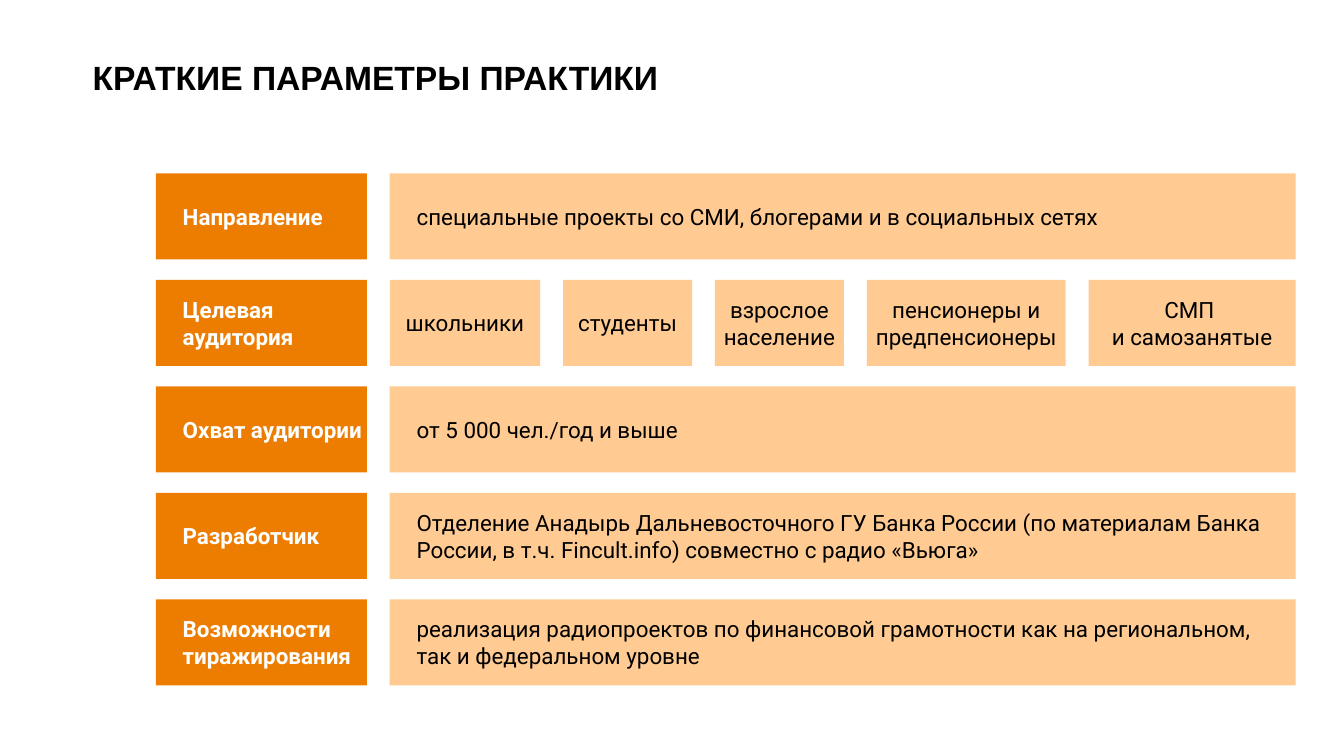
from pptx import Presentation
from pptx.dml.color import RGBColor
from pptx.enum.shapes import MSO_SHAPE
from pptx.enum.text import MSO_ANCHOR, PP_ALIGN
from pptx.util import Inches, Pt

RECTANGLE = MSO_SHAPE.RECTANGLE
TOP, MIDDLE = MSO_ANCHOR.TOP, MSO_ANCHOR.MIDDLE
LEFT, CENTER = PP_ALIGN.LEFT, PP_ALIGN.CENTER

ORANGE = RGBColor(0xED, 0x7D, 0x00)
PEACH = RGBColor(0xFF, 0xCB, 0x92)
WHITE = RGBColor(0xFF, 0xFF, 0xFF)
BLACK = RGBColor(0x00, 0x00, 0x00)

# Grid, in inches
SLIDE_WIDTH = 10
SLIDE_HEIGHT = SLIDE_WIDTH * 9 / 16
LABEL_LEFT, LABEL_WIDTH = 1.16, 1.57
GAP = 0.17
VALUE_LEFT = LABEL_LEFT + LABEL_WIDTH + GAP
VALUE_WIDTH = 6.74
FIRST_TOP, LAST_TOP = 1.29, 4.46
ROW_HEIGHT = 0.64
INDENT = 0.2

AUDIENCES = [
    ("школьники", 1.12),
    ("студенты", 0.96),
    ("взрослое население", 0.96),
    ("пенсионеры и предпенсионеры", 1.48),
    ("СМП \nи самозанятые", 1.54),
]
PARAMETERS = [
    ("Направление", "специальные проекты со СМИ, блогерами и в социальных сетях"),
    ("Целевая аудитория", AUDIENCES),
    ("Охват аудитории", "от 5 000 чел./год и выше"),
    ("Разработчик",
     "Отделение Анадырь Дальневосточного ГУ Банка России (по материалам Банка "
     "России, в т.ч. Fincult.info) совместно с радио «Вьюга»"),
    ("Возможности тиражирования",
     "реализация радиопроектов по финансовой грамотности как на региональном,\n"
     "так и федеральном уровне"),
]


def write(shape, text, color, size=12, font="Roboto", bold=False,
          align=LEFT, anchor=MIDDLE, indent=0):
    frame = shape.text_frame
    frame.word_wrap = True
    frame.vertical_anchor = anchor
    frame.margin_left = Inches(indent)
    frame.margin_top = frame.margin_right = frame.margin_bottom = 0
    frame.text = text
    for paragraph in frame.paragraphs:
        paragraph.alignment = align
        for run in paragraph.runs:
            run.font.name = font
            run.font.size = Pt(size)
            run.font.bold = bold
            run.font.color.rgb = color


def add_title(slide, text):
    title = slide.shapes.add_textbox(
        Inches(0.69), Inches(0.42), Inches(7.53), Inches(0.75))
    write(title, text, BLACK, size=18, font="Arial", bold=True, anchor=TOP)


def add_cell(slide, left, top, width, text, fill, color, **style):
    cell = slide.shapes.add_shape(
        RECTANGLE, Inches(left), Inches(top), Inches(width), Inches(ROW_HEIGHT))
    cell.shadow.inherit = False
    cell.fill.solid()
    cell.fill.fore_color.rgb = fill
    cell.line.fill.background()
    write(cell, text, color, **style)


def add_audiences(slide, top, audiences):
    left = VALUE_LEFT
    for audience, width in audiences:
        add_cell(slide, left, top, width, audience, PEACH, BLACK, align=CENTER)
        left += width + GAP


def main():
    prs = Presentation()
    prs.slide_width, prs.slide_height = Inches(SLIDE_WIDTH), Inches(SLIDE_HEIGHT)
    slide = prs.slides.add_slide(prs.slide_layouts[6])

    add_title(slide, "КРАТКИЕ ПАРАМЕТРЫ ПРАКТИКИ")
    pitch = (LAST_TOP - FIRST_TOP) / (len(PARAMETERS) - 1)
    for row, (label, value) in enumerate(PARAMETERS):
        top = FIRST_TOP + row * pitch
        add_cell(slide, LABEL_LEFT, top, LABEL_WIDTH, label, ORANGE, WHITE,
                 bold=True, indent=INDENT)
        if value is AUDIENCES:
            add_audiences(slide, top, value)
        else:
            add_cell(slide, VALUE_LEFT, top, VALUE_WIDTH, value, PEACH, BLACK,
                     indent=INDENT)

    prs.save("out.pptx")


if __name__ == "__main__":
    main()
